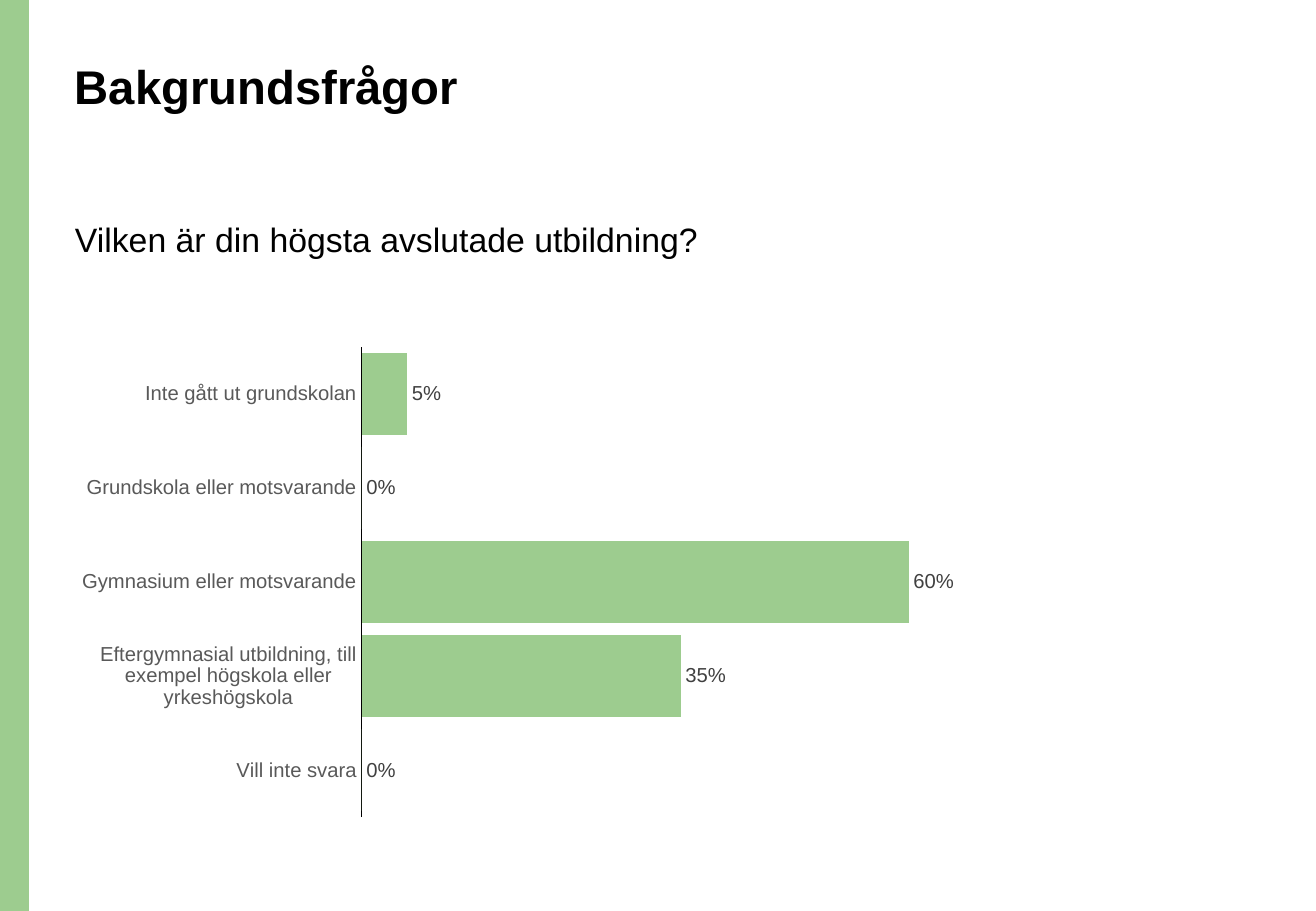
from pptx import Presentation
from pptx.chart.data import CategoryChartData
from pptx.dml.color import RGBColor
from pptx.enum.chart import XL_CHART_TYPE, XL_LABEL_POSITION, XL_TICK_MARK
from pptx.enum.shapes import MSO_SHAPE
from pptx.enum.text import MSO_ANCHOR, PP_ALIGN
from pptx.util import Pt

SCALE = 914400 / 121.5
WIDTH, HEIGHT = 1316, 911
LEFT = 63

EDUCATION_SHARES = {
    "Inte gått ut grundskolan": 0.05,
    "Grundskola eller motsvarande": 0,
    "Gymnasium eller motsvarande": 0.6,
    "Eftergymnasial utbildning, till exempel högskola eller yrkeshögskola": 0.35,
    "Vill inte svara": 0,
}


def px(*lengths):
    """Turn whole px lengths into EMU."""
    return [round(length * SCALE) for length in lengths]


def color(hex_code):
    """Turn a hex string into a colour."""
    return RGBColor.from_string(hex_code)


def style_font(font, size, hex_code, bold=False, name="Arial"):
    """Set the face, size and colour of a font."""
    font.name = name
    font.size = Pt(size)
    font.bold = bold
    font.color.rgb = color(hex_code)


def write(frame, text, size=20, hex_code="000000", bold=False):
    """Write one formatted paragraph into a text frame."""
    frame.word_wrap = True
    frame.vertical_anchor = MSO_ANCHOR.TOP
    paragraph = frame.paragraphs[0]
    paragraph.alignment = PP_ALIGN.LEFT
    paragraph.line_spacing = 0.9
    run = paragraph.add_run()
    run.text = text
    style_font(run.font, size, hex_code, bold)


class SurveySlide:
    """Style and elements of a survey result slide."""

    green, black, label_gray, value_gray = "9DCC8F", "000000", "595959", "404040"

    def __init__(self, presentation):
        """Add a blank slide."""
        self.slide = presentation.slides.add_slide(presentation.slide_layouts[6])

    def band(self, *place):
        """Add a plain green rectangle."""
        band = self.slide.shapes.add_shape(MSO_SHAPE.RECTANGLE, *px(*place))
        band.shadow.inherit = False
        band.fill.solid()
        band.fill.fore_color.rgb = color(self.green)
        band.line.fill.background()

    def text(self, text, *place, **style):
        """Add a text box."""
        box = self.slide.shapes.add_textbox(*px(*place))
        write(box.text_frame, text, **style)

    def bar_chart(self, shares, *place):
        """Add a horizontal bar chart of answer shares."""
        answers = CategoryChartData(number_format="0%")
        answers.categories = list(shares)
        answers.add_series("Series 1", list(shares.values()))
        chart = self.slide.shapes.add_chart(
            XL_CHART_TYPE.BAR_CLUSTERED, *px(*place), answers).chart
        chart.has_legend = False
        chart.has_title = False
        style_font(chart.font, 10, self.black)

        answer_axis = chart.category_axis
        answer_axis.reverse_order = True
        answer_axis.major_tick_mark = XL_TICK_MARK.NONE
        answer_axis.minor_tick_mark = XL_TICK_MARK.NONE
        answer_axis.format.line.color.rgb = color(self.black)
        answer_axis.format.line.width = Pt(0.75)
        style_font(answer_axis.tick_labels.font, 12, self.label_gray)

        share_axis = chart.value_axis
        share_axis.minimum_scale, share_axis.maximum_scale = 0, 0.7
        share_axis.has_major_gridlines = False
        share_axis.visible = False

        plot = chart.plots[0]
        plot.gap_width = 15
        plot.vary_by_categories = False
        bars = plot.series[0]
        bars.invert_if_negative = False
        bars.format.fill.solid()
        bars.format.fill.fore_color.rgb = color(self.green)
        labels = bars.data_labels
        labels.show_value = True
        labels.number_format = "0%"
        labels.number_format_is_linked = False
        labels.position = XL_LABEL_POSITION.OUTSIDE_END
        style_font(labels.font, 12, self.value_gray)


def main():
    """Build and save the slide."""
    presentation = Presentation()
    presentation.slide_width, presentation.slide_height = px(WIDTH, HEIGHT)
    survey = SurveySlide(presentation)
    survey.band(0, 0, 29, HEIGHT)
    survey.text("Vilken är din högsta avslutade utbildning?", LEFT, 217, 733, 90)
    survey.text("Bakgrundsfrågor", LEFT, 58, 1135, 124, size=28, bold=True)
    survey.bar_chart(EDUCATION_SHARES, LEFT, 337, 956, 490)
    presentation.save("out.pptx")


if __name__ == "__main__":
    main()
